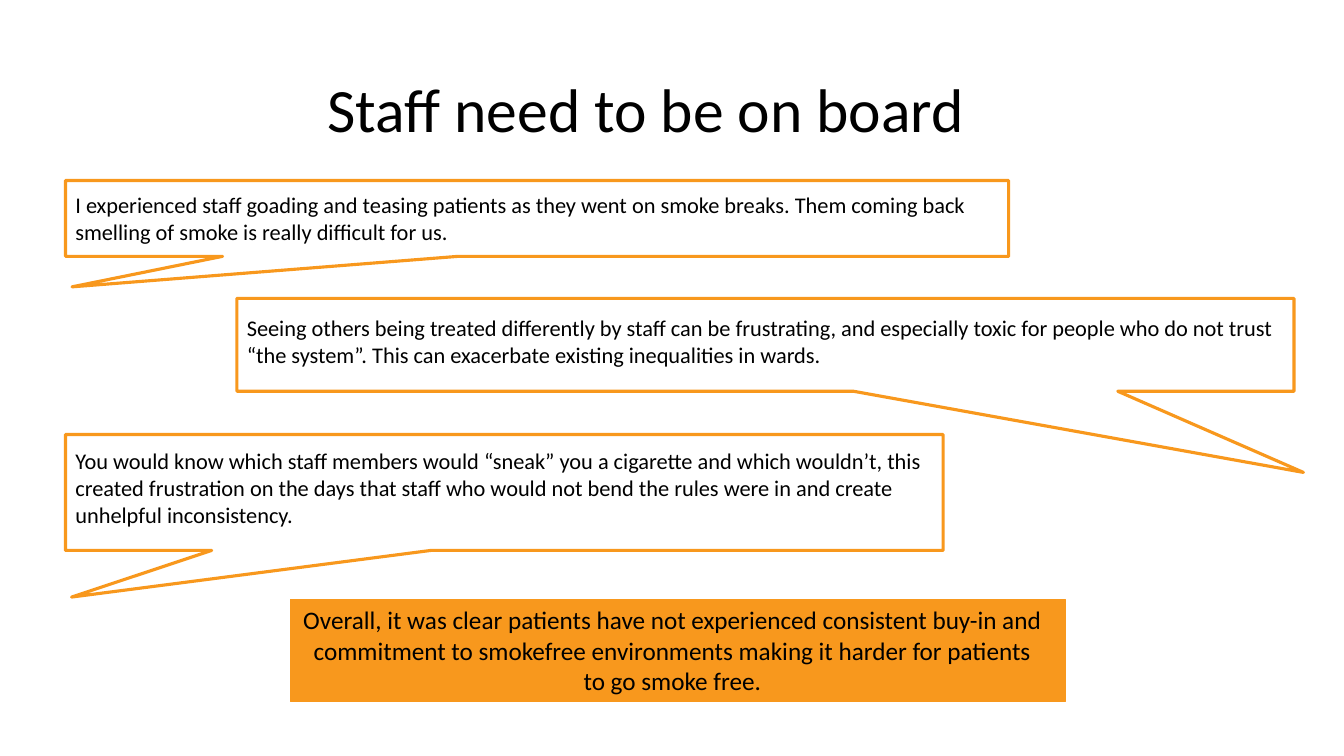
from pptx import Presentation
from pptx.dml.color import RGBColor
from pptx.enum.shapes import MSO_SHAPE
from pptx.enum.text import MSO_ANCHOR, PP_ALIGN
from pptx.util import Cm, Pt

COLOURS = {"orange": "F8981D", "white": "FFFFFF", "text": "000000"}
FONT = "Calibri"

QUOTES = [
    {
        "box": (1.65, 4.55, 23.77, 1.91),
        "tail": (-0.493, 0.903),
        "text_offset": 0.15,
        "text_size": (24.05, 1.63),
        "text": "I experienced staff goading and teasing patients as they went on smoke breaks. "
                "Them coming back smelling of smoke is really difficult for us.",
    },
    {
        "box": (5.97, 7.52, 26.64, 2.34),
        "tail": (0.509, 1.374),
        "text_offset": 0.28,
        "text_size": (26.39, 1.63),
        "text": "Seeing others being treated differently by staff can be frustrating, and "
                "especially toxic for people who do not trust “the system”. This can "
                "exacerbate existing inequalities in wards.",
    },
    {
        "box": (1.65, 10.95, 22.12, 2.92),
        "tail": (-0.493, 0.903),
        "text_offset": 0.2,
        "text_size": (22.12, 2.31),
        "text": "You would know which staff members would “sneak” you a cigarette and which "
                "wouldn’t, this created frustration on the days that staff who would not bend "
                "the rules were in and create unhelpful inconsistency.",
    },
]
SUMMARY = ("Overall, it was clear patients have not experienced consistent buy-in and "
           "commitment to smokefree environments making it harder for patients "
           "to go smoke free.")


def colour(name):
    """Return the palette colour with the given name."""
    return RGBColor.from_string(COLOURS[name])


def add_text(slide, box, text, size=16, align=PP_ALIGN.LEFT, anchor=MSO_ANCHOR.TOP,
             line_spacing=1.0):
    """Add a wrapping text box with one formatted paragraph."""
    frame = slide.shapes.add_textbox(*map(Cm, box)).text_frame
    frame.word_wrap = True
    frame.vertical_anchor = anchor
    paragraph = frame.paragraphs[0]
    paragraph.alignment = align
    paragraph.line_spacing = line_spacing
    run = paragraph.add_run()
    run.text = text
    run.font.name = FONT
    run.font.size = Pt(size)
    run.font.color.rgb = colour("text")


def add_panel(slide, kind, box, fill, line_width):
    """Add a filled shape with an orange outline."""
    shape = slide.shapes.add_shape(kind, *map(Cm, box))
    shape.shadow.inherit = False
    shape.fill.solid()
    shape.fill.fore_color.rgb = colour(fill)
    shape.line.color.rgb = colour("orange")
    shape.line.width = Pt(line_width)
    return shape


def add_quote(slide, box, tail, text_offset, text_size, text):
    """Add a speech callout with a patient quote on it."""
    callout = add_panel(slide, MSO_SHAPE.RECTANGULAR_CALLOUT, box, "white", 2.25)
    for index, value in enumerate(tail):
        callout.adjustments[index] = value
    left, top = box[:2]
    add_text(slide, (left, top + text_offset, *text_size), text)


def add_summary(slide, box):
    """Add the orange conclusion panel with its centred text."""
    left, top, width, height = box
    add_panel(slide, MSO_SHAPE.RECTANGLE, box, "orange", 1)
    add_text(slide, (left, top, width - 0.28, height), SUMMARY, size=18,
             align=PP_ALIGN.CENTER)


def main():
    """Build the slide and save the presentation."""
    presentation = Presentation()
    presentation.slide_width = Cm(33.87)
    presentation.slide_height = Cm(19.05)
    slide = presentation.slides.add_slide(presentation.slide_layouts[6])
    add_text(slide, (8, 0.99, 18.14, 3.68), "Staff need to be on board", size=44,
             anchor=MSO_ANCHOR.MIDDLE, line_spacing=0.9)
    for quote in QUOTES:
        add_quote(slide, **quote)
    add_summary(slide, (7.32, 15.11, 19.53, 2.57))
    presentation.save("out.pptx")


if __name__ == "__main__":
    main()
